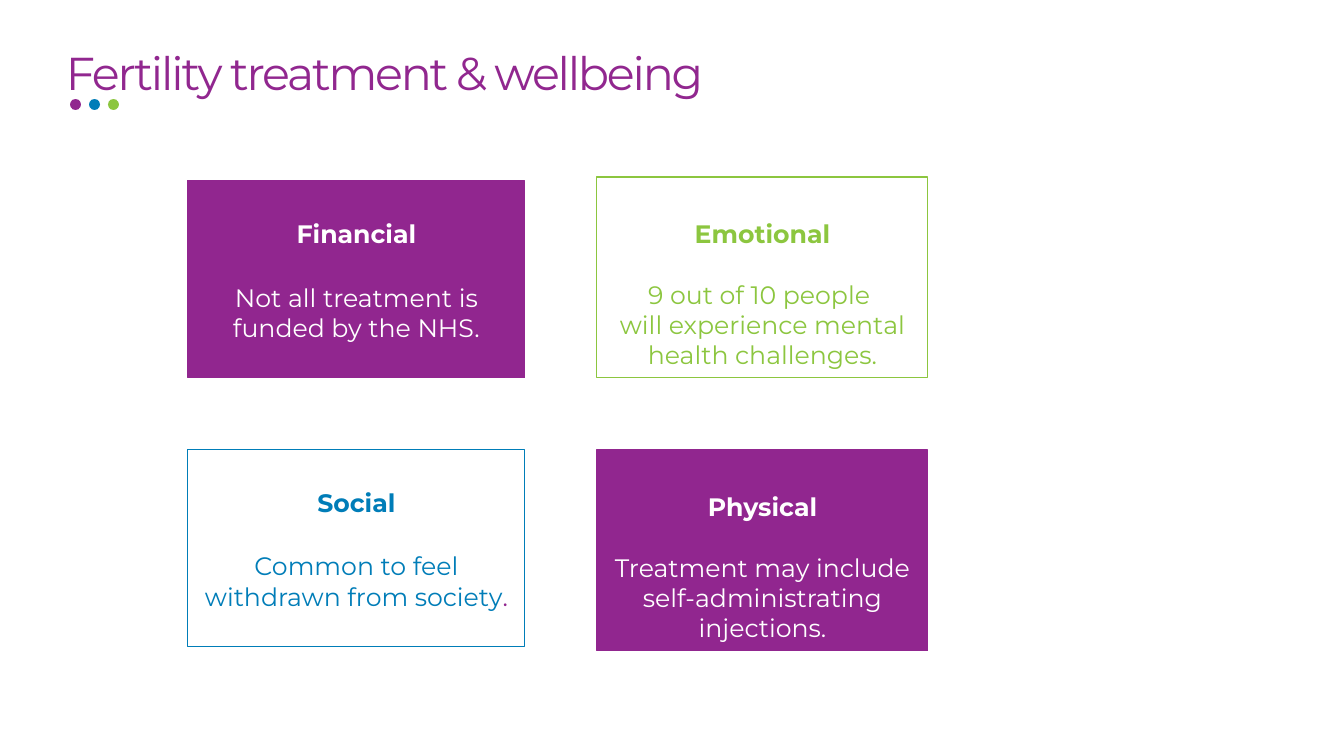
import pptx
import pptx.util
import pptx.dml.color
import pptx.enum.shapes
import pptx.enum.text

PX = 914400 / 100.8  # EMU in one px
THEME = {
    "font": "Montserrat",
    "purple": "91278F",
    "panel": "91268F",
    "blue": "007DB8",
    "green": "8CC63F",
    "white": "FFFFFF",
    "title_size": 32.9,
    "text_size": 18,
}
SHAPES = pptx.enum.shapes.MSO_SHAPE
ALIGN = pptx.enum.text.PP_ALIGN
ANCHOR = pptx.enum.text.MSO_ANCHOR


def px(*lengths):
    return [pptx.util.Emu(round(length * PX)) for length in lengths]


def color(name):
    return pptx.dml.color.RGBColor.from_string(THEME[name])


deck = pptx.Presentation()
deck.slide_width, deck.slide_height = px(1344, 756)
page = deck.slides.add_slide(deck.slide_layouts[6])

# Title with three dots below it
title = page.shapes.add_textbox(*px(56, 48, 1223, 59)).text_frame
title.word_wrap = True
title.vertical_anchor = ANCHOR.MIDDLE
para = title.paragraphs[0]
para.line_spacing = 0.8
para.font.name = THEME["font"]
para.font.size = pptx.util.Pt(THEME["title_size"])
para.font.color.rgb = color("purple")
span = para.add_run()
span.text = "Fertility treatment & wellbeing"
span._r.get_or_add_rPr().set("spc", "-160")

for column, name in enumerate(("purple", "blue", "green")):
    dot = page.shapes.add_shape(SHAPES.OVAL, *px(70 + 19 * column, 99, 11, 11))
    dot.shadow.inherit = False
    dot.fill.solid()
    dot.fill.fore_color.rgb = color(name)
    dot.line.fill.background()

# Cards: left, top, width, height, inset above heading, gap before body in points,
# fill, line, text colour, heading, body spans with their colours
CARDS = [
    (597, 177, 331, 201, 41, 22, None, "green", "green", "Emotional",
     [("9 out of 10 people \vwill experience mental health challenges.", "green")]),
    (188, 181, 337, 197, 37, 24, "panel", "panel", "white", "Financial",
     [("Not all treatment is funded by the NHS.", "white")]),
    (597, 450, 331, 201, 41, 22, "panel", "panel", "white", "Physical",
     [("Treatment may include self-administrating injections.", "white")]),
    (188, 450, 337, 197, 37, 24, "white", "blue", "blue", "Social",
     [("Common to feel withdrawn from society", "blue"), (".", "panel")]),
]

for left, top, width, height, inset, gap, fill, line, ink, heading, body in CARDS:
    card = page.shapes.add_shape(SHAPES.RECTANGLE, *px(left, top, width, height))
    card.shadow.inherit = False
    if fill:
        card.fill.solid()
        card.fill.fore_color.rgb = color(fill)
    else:
        card.fill.background()
    card.line.color.rgb = color(line)
    card.line.width = pptx.util.Pt(0.75)

    frame = card.text_frame
    frame.word_wrap = True
    frame.vertical_anchor = ANCHOR.TOP
    frame.margin_top, frame.margin_bottom = px(inset, 0)
    for spans in ([(heading, ink)], body):
        is_heading = spans is not body
        para = frame.paragraphs[0] if is_heading else frame.add_paragraph()
        para.alignment = ALIGN.CENTER
        if not is_heading:
            para.space_before = pptx.util.Pt(gap)
        para.font.name = THEME["font"]
        para.font.size = pptx.util.Pt(THEME["text_size"])
        para.font.bold = is_heading
        para.font.color.rgb = color(ink)
        for text, span_ink in spans:
            before, separator, after = text.partition("\v")
            para.add_run().text = before
            if separator:
                para.add_line_break()
                para.add_run().text = after
            if span_ink != ink:
                para.runs[-1].font.color.rgb = color(span_ink)

deck.save("out.pptx")
